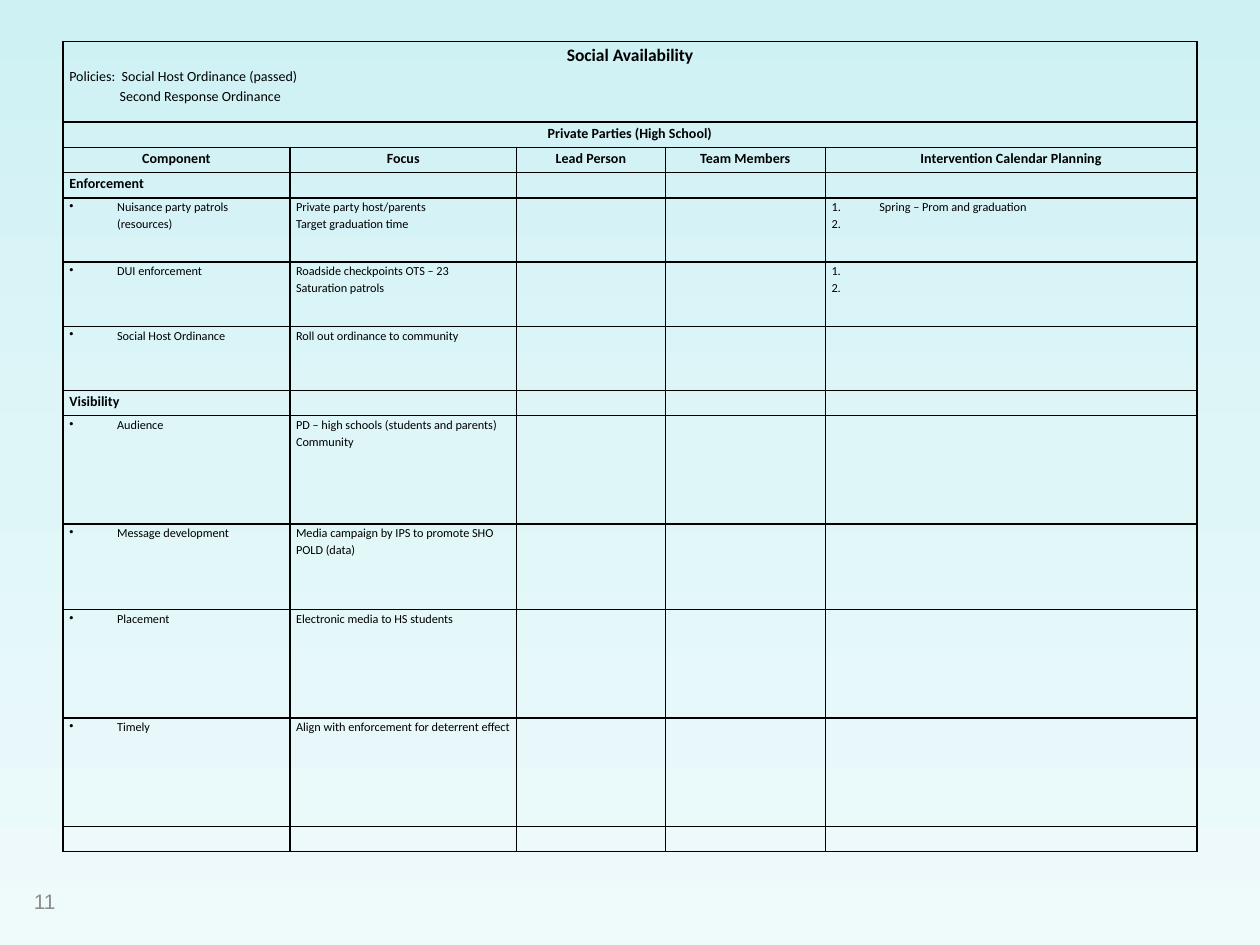
from copy import deepcopy
from dataclasses import dataclass

from lxml.etree import SubElement
from pptx import Presentation
from pptx.dml.color import RGBColor as RGB
from pptx.enum.text import MSO_ANCHOR as Anchor, PP_ALIGN as Align
from pptx.oxml.ns import qn
from pptx.util import Emu, Pt

EMU_PER_PX = 9144  # 100 px to the inch
NBSP = chr(160)  # keeps the number of an empty list item visible


@dataclass(frozen=True)
class Theme:
    ink: RGB = RGB(0, 0, 0)
    muted: RGB = RGB(0x8C, 0x8C, 0x8C)
    background: tuple = ((0, "CEF1F4"), (0.5, "DFF6F8"), (1, "EFFAFB"))
    body_font: str = "Calibri"
    number_font: str = "Arial"
    title: int = 10
    heading: int = 8
    body: int = 7
    page: int = 12
    spacing: float = 1.15
    border: int = 1


T = Theme()


@dataclass(frozen=True)
class Para:
    text: str
    size: int = T.body
    bold: bool = False
    align: Align = Align.LEFT
    bullet: str = ""  # "char" or "number"
    indent: int = 0


@dataclass(frozen=True)
class Row:
    height: int
    cells: tuple = ()  # one tuple of Para for each filled column
    merged: bool = False


def px(n: int) -> Emu:
    return Emu(n * EMU_PER_PX)


def assign(obj, values: dict) -> None:
    for name, value in values.items():
        setattr(obj, name, value)


def head(text: str, size: int = T.heading) -> Para:
    return Para(text, size, True, Align.CENTER)


def section(text: str) -> Row:
    return Row(20, ((Para(text, T.heading, True),),))


def activity(height: int, name: str, focus: tuple, plan: tuple = ()) -> Row:
    focus_paras = tuple(Para(line) for line in focus)
    return Row(height, ((Para(name, bullet="char"),), focus_paras, (), (), plan))


COLUMNS = (180, 180, 118, 127, 295)
HEADINGS = ("Component", "Focus", "Lead Person", "Team Members",
            "Intervention Calendar Planning")
ROWS = (
    Row(64, ((head("Social Availability", T.title),
              Para("Policies:  Social Host Ordinance (passed)", T.heading),
              Para("Second Response Ordinance", T.heading, indent=40)),), True),
    Row(20, ((head("Private Parties (High School)"),),), True),
    Row(20, tuple((head(text),) for text in HEADINGS)),
    section("Enforcement"),
    activity(51, "Nuisance party patrols (resources)",
             ("Private party host/parents", "Target graduation time"),
             (Para("Spring – Prom and graduation", bullet="number"),
              Para(NBSP, bullet="number"))),
    activity(51, "DUI enforcement",
             ("Roadside checkpoints OTS – 23", "Saturation patrols"),
             (Para("1."), Para("2."))),
    activity(51, "Social Host Ordinance", ("Roll out ordinance to community",)),
    section("Visibility"),
    activity(86, "Audience",
             ("PD – high schools (students and parents)", "Community")),
    activity(68, "Message development",
             ("Media campaign by IPS to promote SHO", "POLD (data)")),
    activity(86, "Placement", ("Electronic media to HS students",)),
    activity(86, "Timely", ("Align with enforcement for deterrent effect",)),
    Row(20),
)


def paint_background(s) -> None:
    fill = s.background.fill
    fill.gradient()
    fill.gradient_angle = 270
    stops = s._element.find(".//" + qn("a:gsLst"))
    stops.append(deepcopy(stops[-1]))
    for stop, (position, color) in zip(fill.gradient_stops, T.background):
        stop.position = position
        stop.color.rgb = RGB.from_string(color)


def add_borders(cell) -> None:
    tcPr = cell._tc.get_or_add_tcPr()
    for side in ("lnL", "lnR", "lnT", "lnB"):
        ln = SubElement(tcPr, qn(f"a:{side}"), w=str(Pt(T.border)))
        SubElement(SubElement(ln, qn("a:solidFill")), qn("a:srgbClr"), val=str(T.ink))


def write_para(p, para: Para) -> None:
    assign(p, {"alignment": para.align, "line_spacing": T.spacing})
    pPr = p._p.get_or_add_pPr()
    if para.bullet:
        pPr.set("marL", str(px(38)))
        pPr.set("indent", str(-px(38)))
        if para.bullet == "char":
            SubElement(pPr, qn("a:buChar"), char="•")
        else:
            SubElement(pPr, qn("a:buAutoNum"), type="arabicPeriod")
    elif para.indent:
        pPr.set("marL", str(px(para.indent)))
    r = p.add_run()
    r.text = para.text
    assign(r.font, {"name": T.body_font, "size": Pt(para.size), "bold": para.bold})
    r.font.color.rgb = T.ink


def fill_cell(cell, paras: tuple) -> None:
    assign(cell, {"margin_left": px(5), "margin_right": px(5), "margin_top": 0,
                  "margin_bottom": 0, "vertical_anchor": Anchor.TOP})
    add_borders(cell)
    cell.fill.background()
    tf = cell.text_frame
    for i, para in enumerate(paras):
        write_para(tf.add_paragraph() if i else tf.paragraphs[0], para)
    if not paras:  # small text size keeps empty rows low
        SubElement(tf.paragraphs[0]._p, qn("a:endParaRPr"), sz=str(T.body * 100))


def add_plan_table(s) -> None:
    height = sum(row.height for row in ROWS)
    table = s.shapes.add_table(len(ROWS), len(COLUMNS), px(50), px(33),
                               px(sum(COLUMNS)), px(height)).table
    assign(table, {"first_row": False, "horz_banding": False})
    for column, width in zip(table.columns, COLUMNS):
        column.width = px(width)
    for i, row in enumerate(ROWS):
        table.rows[i].height = px(row.height)
        if row.merged:
            table.cell(i, 0).merge(table.cell(i, len(COLUMNS) - 1))
        for j in range(len(COLUMNS)):
            fill_cell(table.cell(i, j), row.cells[j] if j < len(row.cells) else ())


def add_page_number(s, number: str) -> None:
    tf = s.shapes.add_textbox(px(17), px(695), px(233), px(40)).text_frame
    assign(tf, {"word_wrap": True, "vertical_anchor": Anchor.MIDDLE})
    r = tf.paragraphs[0].add_run()
    r.text = number
    assign(r.font, {"name": T.number_font, "size": Pt(T.page)})
    r.font.color.rgb = T.muted


def main() -> None:
    prs = Presentation()
    assign(prs, {"slide_width": px(1000), "slide_height": px(750)})
    s = prs.slides.add_slide(prs.slide_layouts[6])
    paint_background(s)
    # Page number, then the planning table
    add_page_number(s, "11")
    add_plan_table(s)
    prs.save("out.pptx")


if __name__ == "__main__":
    main()
